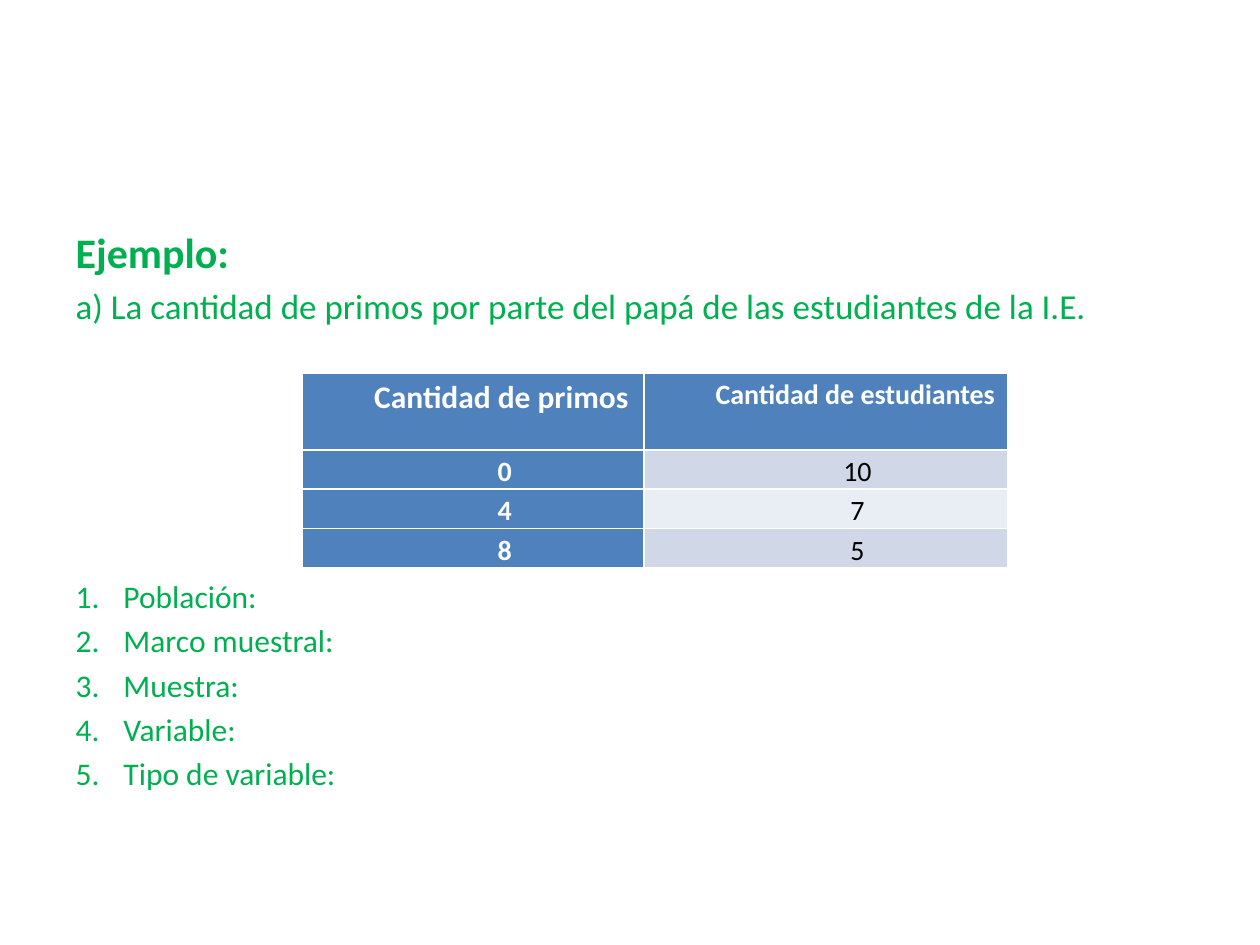
from lxml import etree
from pptx import Presentation
from pptx.dml.color import RGBColor
from pptx.enum.text import MSO_AUTO_SIZE, PP_ALIGN
from pptx.oxml.ns import qn
from pptx.util import Inches, Pt

GREEN = RGBColor(0x00, 0xB0, 0x50)
BLUE = RGBColor(0x4F, 0x81, 0xBD)
BANDS = (RGBColor(0xD0, 0xD8, 0xE8), RGBColor(0xE9, 0xED, 0xF4))
WHITE = RGBColor(0xFF, 0xFF, 0xFF)
BLACK = RGBColor(0x00, 0x00, 0x00)
FONT = "Calibri"

INTRO = [
    ("Ejemplo:", {"size": Pt(24), "bold": True}),
    ("a) La cantidad de primos por parte del papá de las estudiantes de la I.E.",
     {"size": Pt(20), "bold": False}),
]
QUESTIONS = ["Población:", "Marco muestral:", "Muestra:", "Variable:", "Tipo de variable:"]
TABLE_GAP = Pt(143.5)  # room for the table between the intro and the questions

ROWS = [
    ("Cantidad de primos", "Cantidad de estudiantes"),
    ("0", "10"),
    ("4", "7"),
    ("8", "5"),
]
COLUMN_WIDTHS = (2.71, 2.89)
ROW_HEIGHTS = (0.61, 0.3, 0.3, 0.3)


def add_span(para, text, font_values):
    span = para.add_run()
    span.text = text
    span.font.name = FONT
    for name, value in font_values.items():
        if name == "color":
            span.font.color.rgb = value
        else:
            setattr(span.font, name, value)


def set_bullet(para, indent, tag, **attributes):
    """Give the paragraph a hanging indent and the bullet element named by tag."""
    properties = para._p.get_or_add_pPr()
    properties.set("marL", str(Inches(indent)))
    properties.set("indent", str(Inches(-indent)))
    etree.SubElement(properties, qn(tag), attributes)


def fill_body(body):
    body.left, body.top = Inches(0.5), Inches(1.75)
    body.width, body.height = Inches(9), Inches(4.95)
    frame = body.text_frame
    frame.auto_size = MSO_AUTO_SIZE.NONE
    for index, (text, values) in enumerate(INTRO):
        para = frame.add_paragraph() if index else frame.paragraphs[0]
        set_bullet(para, 0, "a:buNone")
        add_span(para, text, {**values, "color": GREEN})
    for index, text in enumerate(QUESTIONS):
        para = frame.add_paragraph()
        if index == 0:
            para.space_before = TABLE_GAP
        set_bullet(para, 0.38, "a:buFont", typeface="+mj-lt")
        etree.SubElement(para._p.pPr, qn("a:buAutoNum"), type="arabicPeriod")
        add_span(para, text, {"size": Pt(18), "color": GREEN})


def fill_cell(cell, text, row, column):
    is_heading = row == 0 or column == 0
    cell.margin_left = cell.margin_right = Inches(0.07)
    cell.margin_top = cell.margin_bottom = 0
    cell.fill.solid()
    cell.fill.fore_color.rgb = BLUE if is_heading else BANDS[(row - 1) % 2]
    para = cell.text_frame.paragraphs[0]
    para.alignment = PP_ALIGN.CENTER if row else PP_ALIGN.JUSTIFY
    para.line_spacing = 1.15
    properties = para._p.get_or_add_pPr()
    properties.set("marL", str(Inches(0.5)))
    properties.set("indent", "0")
    add_span(para, text, {
        "size": Pt(18 if row == column == 0 else 16),
        "bold": is_heading,
        "color": WHITE if is_heading else BLACK,
    })


def add_cousins_table(page):
    table = page.shapes.add_table(
        len(ROWS), len(COLUMN_WIDTHS), Inches(2.4), Inches(2.96),
        Inches(sum(COLUMN_WIDTHS)), Inches(sum(ROW_HEIGHTS))).table
    table.first_col = True
    for column, width in zip(table.columns, COLUMN_WIDTHS):
        column.width = Inches(width)
    for row, height in zip(table.rows, ROW_HEIGHTS):
        row.height = Inches(height)
    for row, texts in enumerate(ROWS):
        for column, text in enumerate(texts):
            fill_cell(table.cell(row, column), text, row, column)


def main():
    deck = Presentation()
    deck.slide_width, deck.slide_height = Inches(10), Inches(7.5)
    page = deck.slides.add_slide(deck.slide_layouts[1])
    title = page.shapes.title.element
    title.getparent().remove(title)
    fill_body(page.placeholders[1])
    add_cousins_table(page)
    deck.save("out.pptx")


if __name__ == "__main__":
    main()
